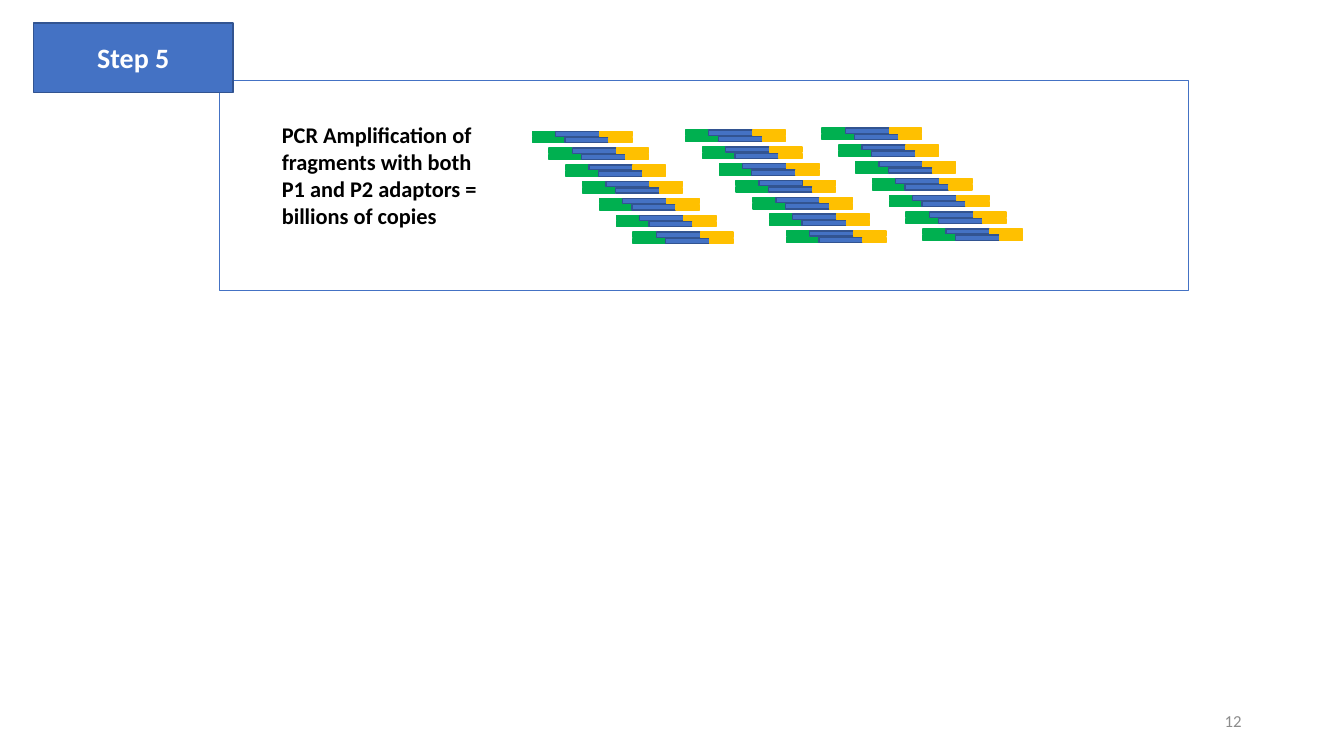
import dataclasses

import pptx
import pptx.dml.color
import pptx.enum.shapes
import pptx.enum.text
import pptx.util

PX = 9525  # EMU in one px, at 96 px to the inch
ALIGN = pptx.enum.text.PP_ALIGN
ANCHOR = pptx.enum.text.MSO_ANCHOR


@dataclasses.dataclass(frozen=True)
class Theme:
    font: str = "Calibri"
    blue: str = "4472C4"
    dark_blue: str = "325491"
    green: str = "00B050"
    amber: str = "FFC000"
    black: str = "000000"
    white: str = "FFFFFF"
    grey: str = "8C8C8C"
    step_size: int = 20
    caption_size: int = 16
    number_size: int = 12
    line_width: int = 1


THEME = Theme()


def rgb(value):
    return pptx.dml.color.RGBColor.from_string(value)


def emu(*lengths):
    return [pptx.util.Emu(length * PX) for length in lengths]


def write_text(shape, text, size, color, bold=False, align=ALIGN.LEFT, anchor=ANCHOR.TOP):
    frame = shape.text_frame
    frame.text = text
    frame.word_wrap = True
    frame.auto_size = pptx.enum.text.MSO_AUTO_SIZE.NONE
    frame.vertical_anchor = anchor
    paragraph = frame.paragraphs[0]
    paragraph.alignment = align
    font = paragraph.runs[0].font
    font.name, font.size, font.bold = THEME.font, pptx.util.Pt(size), bold
    font.color.rgb = rgb(color)


def paint(shape, line, fill=None):
    if fill:
        shape.fill.solid()
        shape.fill.fore_color.rgb = rgb(fill)
    else:
        shape.fill.background()
    shape.line.color.rgb = rgb(line)
    shape.line.width = pptx.util.Pt(THEME.line_width)


def add_rect(shapes, box, line, fill=None):
    rect = shapes.add_shape(pptx.enum.shapes.MSO_SHAPE.RECTANGLE, *emu(*box))
    rect.shadow.inherit = False
    paint(rect, line, fill)
    return rect


def add_fragment(shapes, left, top):
    """Draw two offset strands, each an insert between its P1 and P2 adaptors."""
    short, insert, long = 22, 42, 31
    strand_pitch, thickness = 6, 5
    for strand, (p1, p2) in enumerate([(short, long), (long, short)]):
        x = left
        for width, line, fill in [
            (p1, THEME.green, THEME.green),
            (insert, THEME.dark_blue, THEME.blue),
            (p2, THEME.amber, THEME.amber),
        ]:
            add_rect(shapes, (x, top + strand * strand_pitch, width, thickness), line, fill)
            x += width


def add_amplification(slide, box):
    """Draw the outlined panel with its caption and cascades of copied fragments."""
    left, top, _, _ = box
    panel = add_rect(slide.shapes, box, THEME.blue)
    shapes = slide.shapes.add_group_shape().shapes

    caption = shapes.add_textbox(*emu(left + 50, top + 34, 206, 113))
    write_text(
        caption,
        "PCR Amplification of fragments with both P1 and P2 adaptors = billions of copies",
        size=THEME.caption_size, color=THEME.black, bold=True,
    )

    copies, pitch = 7, 16
    for cascade_x, cascade_y in [(298, 48), (444, 47), (574, 45)]:
        for copy_index in range(copies):
            shift = copy_index * pitch
            add_fragment(shapes, left + cascade_x + shift, top + cascade_y + shift)
    return panel


def add_step_label(slide, box, behind):
    """Format the title as the step label and lift it above the shape behind it."""
    label = slide.shapes.title
    label.left, label.top, label.width, label.height = emu(*box)
    paint(label, THEME.dark_blue, THEME.blue)
    write_text(label, "Step 5", size=THEME.step_size, color=THEME.white, bold=True,
               align=ALIGN.CENTER, anchor=ANCHOR.MIDDLE)
    behind.element.addnext(label.element)


def add_page_number(slide, box):
    number = slide.shapes.add_textbox(*emu(*box))
    write_text(number, "12", size=THEME.number_size, color=THEME.grey,
               align=ALIGN.RIGHT, anchor=ANCHOR.MIDDLE)


def main():
    deck = pptx.Presentation()
    deck.slide_width, deck.slide_height = emu(1280, 720)
    title_only = deck.slide_layouts[5]
    slide = deck.slides.add_slide(title_only)
    panel = add_amplification(slide, (209, 77, 923, 200))
    add_step_label(slide, (32, 22, 190, 66), behind=panel)
    add_page_number(slide, (904, 667, 288, 38))
    deck.save("out.pptx")


if __name__ == "__main__":
    main()
